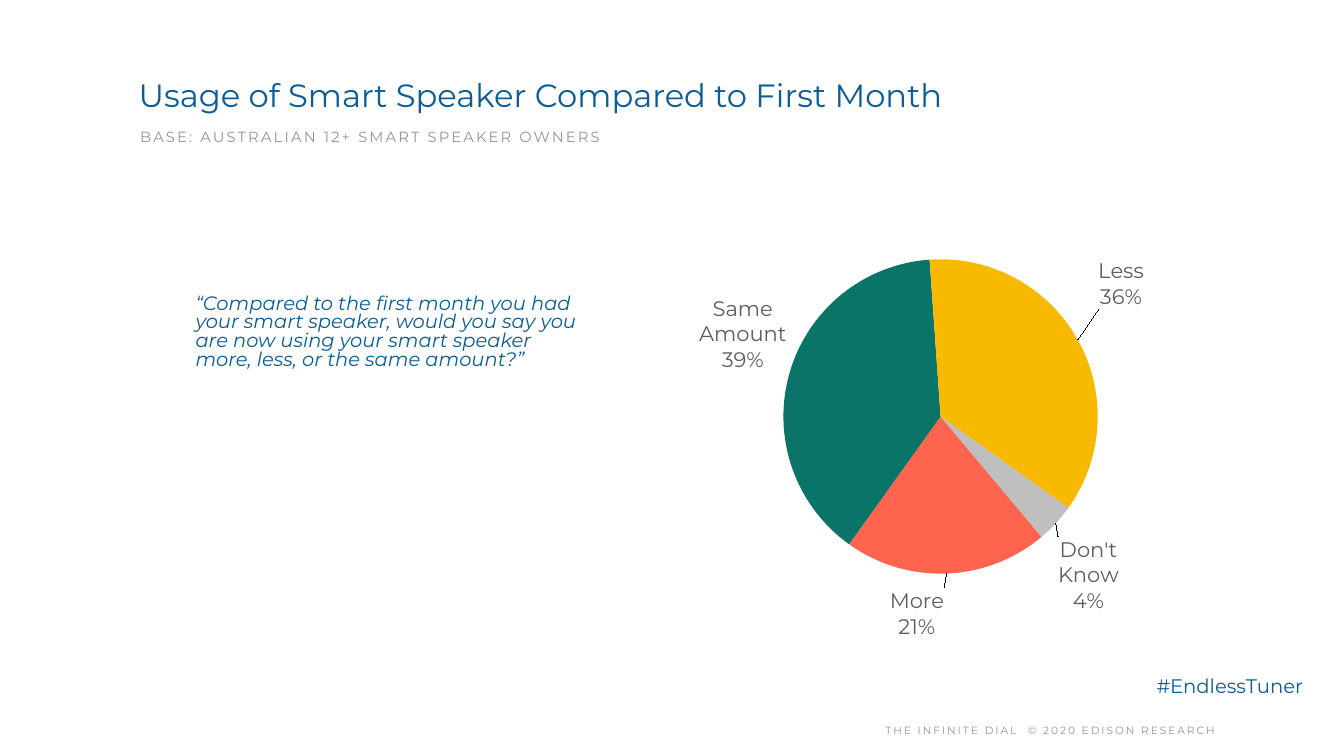
from copy import deepcopy

from lxml import etree
from pptx import Presentation
from pptx.chart.data import CategoryChartData
from pptx.dml.color import RGBColor
from pptx.enum.chart import XL_CHART_TYPE, XL_LABEL_POSITION
from pptx.enum.text import MSO_ANCHOR, PP_ALIGN
from pptx.oxml.ns import qn
from pptx.util import Inches, Pt

PIE = XL_CHART_TYPE.PIE
OUTSIDE = XL_LABEL_POSITION.OUTSIDE_END
TOP, MIDDLE = MSO_ANCHOR.TOP, MSO_ANCHOR.MIDDLE
LEFT, CENTER = PP_ALIGN.LEFT, PP_ALIGN.CENTER

FONT = "Montserrat"
COLORS = {
    "blue": "0A5D96", "gray": "959595", "label": "5E5E5E",
    "coral": "FF644E", "teal": "0B7468", "yellow": "F7BA01", "silver": "BFBFBF",
}

TEXTS = [
    dict(text="Usage of Smart Speaker Compared to First Month",
         box=(2.67, 1.41, 21.69, 1.23), size=46, color="blue"),
    dict(text="BASE: AUSTRALIAN 12+ SMART SPEAKER OWNERS",
         box=(2.7, 2.38, 22.55, 0.58), size=21, color="gray",
         line=1.2, anchor=MIDDLE, spacing=3.1),
    dict(text="“Compared to the first month you had your smart speaker, would you say "
              "you are now using your smart speaker more, less, or the same amount?”",
         box=(3.8, 5.78, 7.86, 1.79), size=27.8, color="blue", line=0.8, italic=True),
    dict(text="#EndlessTuner",
         box=(22.87, 13.25, 3.29, 0.68), size=28, color="blue", line=1.1),
    dict(text="THE INFINITE DIAL  © 2020 EDISON RESEARCH",
         box=(14.95, 14.21, 11.78, 0.53), size=15, color="gray",
         line=1.2, anchor=MIDDLE, align=CENTER, spacing=2.9),
]

CHART_BOX = (12.75, 2.65, 11.83, 11.34)
PLOT_AREA = {"x": 0.22, "y": 0.22, "w": 0.56, "h": 0.55}
START_ANGLE = 140
USAGE = [
    ("More", 21, "coral", (-0.05, 0.02)),
    ("Same Amount", 39, "teal", None),
    ("Less", 36, "yellow", (0.03, -0.05)),
    ("Don't Know", 4, "silver", (0, 0.02)),
]


def rgb(name):
    return RGBColor.from_string(COLORS[name])


def style_font(font, size, color):
    font.name = FONT
    font.size = Pt(size)
    font.color.rgb = rgb(color)


def add_text(s, text, box, size, color, line=1.0, anchor=TOP, align=LEFT,
             spacing=None, italic=False):
    tf = s.shapes.add_textbox(*map(Inches, box)).text_frame
    tf.word_wrap = True
    tf.vertical_anchor = anchor
    tf.margin_left = tf.margin_right = tf.margin_top = tf.margin_bottom = Inches(0.08)
    p = tf.paragraphs[0]
    r = p.add_run()
    r.text = text
    p.alignment = align
    p.line_spacing = line
    style_font(p.font, size, color)
    p.font.italic = italic
    if spacing:
        r._r.get_or_add_rPr().set("spc", str(round(spacing * 100)))


def make_layout(settings):
    layout = etree.Element(qn("c:layout"))
    manual = etree.SubElement(layout, qn("c:manualLayout"))
    for tag, value in settings.items():
        etree.SubElement(manual, qn(f"c:{tag}")).set("val", str(value))
    return layout


def place_plot(chart):
    area = chart._chartSpace.chart.plotArea
    for old in area.findall(qn("c:layout")):
        area.remove(old)
    edges = {"layoutTarget": "inner", "xMode": "edge", "yMode": "edge"}
    area.insert(0, make_layout({**edges, **PLOT_AREA}))


def shift_labels(labels):
    shared = [deepcopy(e) for e in labels if e.tag != qn("c:showLeaderLines")]
    moved = []
    for i, (_, _, _, shift) in enumerate(USAGE):
        if shift:
            label = etree.Element(qn("c:dLbl"))
            etree.SubElement(label, qn("c:idx")).set("val", str(i))
            label.append(make_layout(dict(zip("xy", shift))))
            label.extend(deepcopy(shared))
            moved.append(label)
    labels[:0] = moved


def add_pie(s):
    data = CategoryChartData()
    data.categories = [name for name, *_ in USAGE]
    data.add_series("Series 1", [value for _, value, *_ in USAGE])
    chart = s.shapes.add_chart(PIE, *map(Inches, CHART_BOX), data).chart
    chart.has_legend = False
    chart.has_title = False
    style_font(chart.font, 10, "gray")

    plot = chart.plots[0]
    plot.vary_by_categories = True
    series = plot.series[0]
    for i, (_, _, color, _) in enumerate(USAGE):
        fill = series.points[i].format.fill
        fill.solid()
        fill.fore_color.rgb = rgb(color)

    labels = series.data_labels
    labels.show_category_name = True
    labels.show_percentage = True
    labels.show_value = False
    labels.number_format = "#,##0%"
    labels.number_format_is_linked = False
    labels.position = OUTSIDE
    style_font(labels.font, 30, "label")
    separator = etree.Element(qn("c:separator"))
    separator.text = "\n"
    labels._element.find(qn("c:showBubbleSize")).addnext(separator)
    shift_labels(labels._element)

    pie = plot._element
    for old in pie.findall(qn("c:firstSliceAng")):
        pie.remove(old)
    etree.SubElement(pie, qn("c:firstSliceAng")).set("val", str(START_ANGLE))
    place_plot(chart)


def main():
    prs = Presentation()
    prs.slide_width, prs.slide_height = Inches(26.67), Inches(15)
    s = prs.slides.add_slide(prs.slide_layouts[6])
    add_pie(s)
    for item in TEXTS:
        add_text(s, **item)
    prs.save("out.pptx")


if __name__ == "__main__":
    main()
